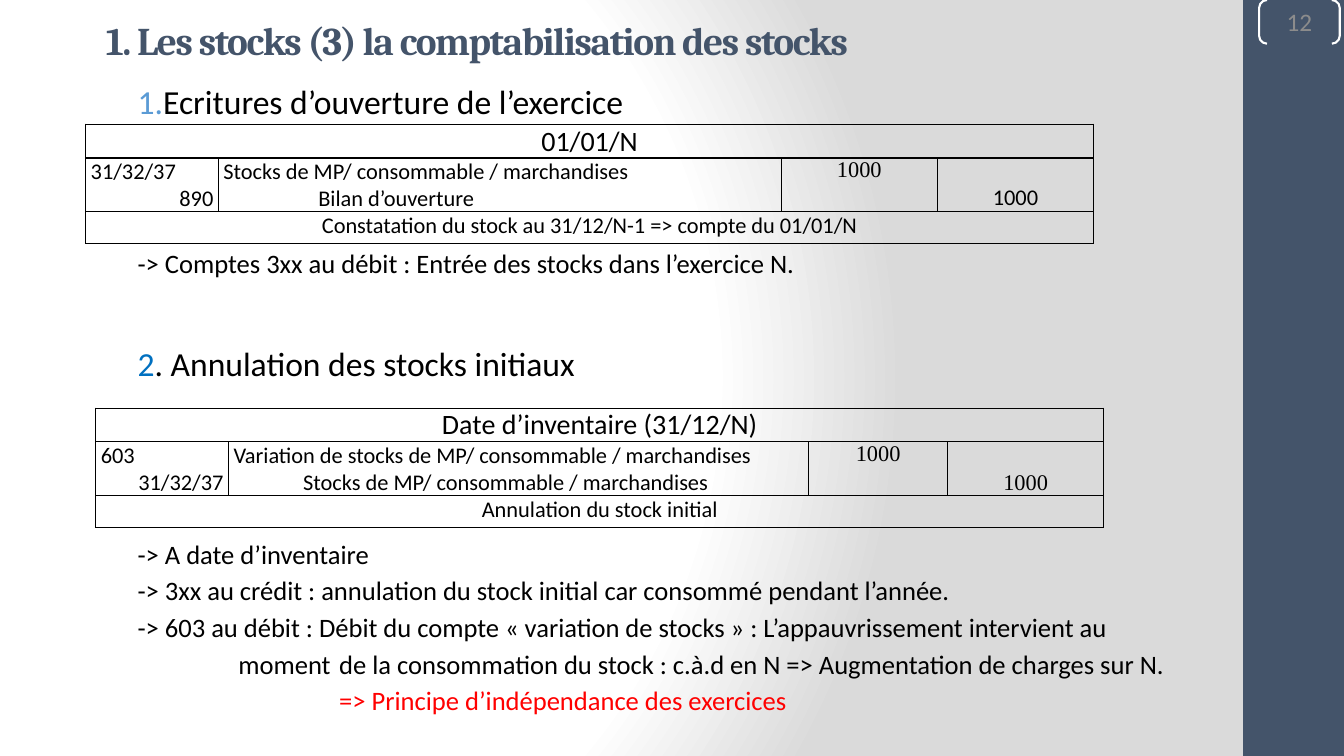
from dataclasses import dataclass

from lxml import etree
from pptx import Presentation
from pptx.dml.color import RGBColor
from pptx.enum.shapes import MSO_SHAPE
from pptx.enum.text import MSO_ANCHOR, PP_ALIGN
from pptx.oxml import parse_xml
from pptx.oxml.ns import nsdecls, qn
from pptx.util import Emu, Pt

LEFT, CENTER, RIGHT = PP_ALIGN.LEFT, PP_ALIGN.CENTER, PP_ALIGN.RIGHT
TOP, MIDDLE, BOTTOM = MSO_ANCHOR.TOP, MSO_ANCHOR.MIDDLE, MSO_ANCHOR.BOTTOM
RECT, BRACKETS = MSO_SHAPE.RECTANGLE, MSO_SHAPE.DOUBLE_BRACKET

# Grid: 160 columns by 90 rows of square units
COLS, ROWS = 160, 90
UNIT = 76200


@dataclass(frozen=True)
class Theme:
    ink: str = "000000"
    navy: str = "44546A"
    white: str = "FFFFFF"
    shade: str = "DADADA"
    grey: str = "8C8C8C"
    number: str = "5B9BD5"
    blue: str = "0070C0"
    red: str = "FF0000"
    body: str = "Calibri"
    heading: str = "Cambria"
    figures: str = "Times New Roman"
    title_size: float = 28
    section_size: float = 24
    date_size: float = 20
    note_size: float = 19
    page_size: float = 18
    entry_size: float = 16


T = Theme()


@dataclass(frozen=True)
class Para:
    text: str
    size: float = T.entry_size
    color: str = T.ink
    font: str = T.body
    align: PP_ALIGN = LEFT
    bold: bool = False
    before: float = 0
    margin: float = 0
    hang: float = 0
    numbered: bool = False
    lead: str = ""
    lead_color: str = T.blue


@dataclass(frozen=True)
class Entry:
    """A journal entry: date, debit and credit lines, wording."""
    x: float
    y: float
    widths: tuple[float, ...]
    date: str
    accounts: tuple[str, str]
    labels: tuple[str, str]
    indent: float
    credit_font: str
    wording: str


ENTRIES = (
    Entry(10.2, 14.8, (15.8, 67, 18.6, 18.6), "01/01/N", ("31/32/37", "890"),
          ("Stocks de MP/ consommable / marchandises", "Bilan d’ouverture"),
          11.3, T.body, "Constatation du stock au 31/12/N-1 => compte du 01/01/N"),
    Entry(11.4, 48.6, (15.8, 69.1, 16.5, 18.6), "Date d’inventaire (31/12/N)",
          ("603", "31/32/37"),
          ("Variation de stocks de MP/ consommable / marchandises",
           "Stocks de MP/ consommable / marchandises"),
          8.3, T.figures, "Annulation du stock initial"),
)
ENTRY_ROWS = (4, 6.4, 3.8)
AMOUNT = "1000"


def note(text: str, before: float = 3.4, margin: float = 1.5, color: str = T.ink) -> Para:
    return Para(text, T.note_size, color, before=before, margin=margin)


BODY = (
    Para("Ecritures d’ouverture de l’exercice", T.section_size,
         margin=4.5, hang=-3, numbered=True),
    note("-> Comptes 3xx au débit : Entrée des stocks dans l’exercice N.", 90),
    Para(". Annulation des stocks initiaux", T.section_size,
         before=46, margin=1.5, lead="2"),
    note("-> A date d’inventaire", 110),
    note("-> 3xx au crédit : annulation du stock initial car consommé pendant l’année."),
    note("-> 603 au débit : Débit du compte « variation de stocks » : "
         "L’appauvrissement intervient au"),
    note("moment\tde la consommation du stock : c.à.d en N => "
         "Augmentation de charges sur N.", margin=13.5),
    note("=> Principe d’indépendance des exercices", margin=25.5, color=T.red),
)


def u(n: float) -> Emu:
    return Emu(round(n * UNIT))


def rgb(color: str) -> RGBColor:
    return RGBColor.from_string(color)


def write(tf, paras: tuple[Para, ...]) -> None:
    for i, item in enumerate(paras):
        p = tf.paragraphs[0] if i == 0 else tf.add_paragraph()
        pPr = p._p.get_or_add_pPr()
        pPr.set("marL", str(u(item.margin)))
        pPr.set("indent", str(u(item.hang)))
        if item.numbered:
            color = etree.SubElement(pPr, qn("a:buClr"))
            etree.SubElement(color, qn("a:srgbClr"), val=T.number)
            etree.SubElement(pPr, qn("a:buAutoNum"), type="arabicPeriod")
        else:
            etree.SubElement(pPr, qn("a:buNone"))
        p.alignment, p.space_before = item.align, Pt(item.before)
        for text, color in ((item.lead, item.lead_color), (item.text, item.color)):
            if not text:
                continue
            r = p.add_run()
            r.text = text
            fmt = {"size": Pt(item.size), "name": item.font, "bold": item.bold}
            for name, value in fmt.items():
                setattr(r.font, name, value)
            r.font.color.rgb = rgb(color)


def add_preset(slide, kind: MSO_SHAPE, x: float, y: float, w: float, h: float):
    sp = slide.shapes.add_shape(kind, u(x), u(y), u(w), u(h))
    sp.shadow.inherit = False
    return sp


def fill_cell(cell, paras: tuple[Para, ...], anchor: MSO_ANCHOR = TOP) -> None:
    fmt = {"margin_left": u(0.6), "margin_right": u(0.6), "margin_top": 0,
           "margin_bottom": 0, "vertical_anchor": anchor}
    for name, value in fmt.items():
        setattr(cell, name, value)
    write(cell.text_frame, paras)


def add_entry(slide, e: Entry) -> None:
    tbl = slide.shapes.add_table(len(ENTRY_ROWS), len(e.widths), u(e.x), u(e.y),
                                 u(sum(e.widths)), u(sum(ENTRY_ROWS))).table
    tbl.first_row = tbl.horz_banding = False
    for col, width in zip(tbl.columns, e.widths):
        col.width = u(width)
    for row, height in zip(tbl.rows, ENTRY_ROWS):
        row.height = u(height)
    for cell in tbl.iter_cells():
        tcPr = cell._tc.get_or_add_tcPr()
        for side in ("lnL", "lnR", "lnT", "lnB"):
            tcPr.append(parse_xml(
                f'<a:{side} {nsdecls("a")} w="{Pt(1)}"><a:solidFill>'
                f'<a:srgbClr val="{T.ink}"/></a:solidFill></a:{side}>'))
        cell.fill.background()
    for row in (0, 2):
        tbl.cell(row, 0).merge(tbl.cell(row, len(e.widths) - 1))
    fill_cell(tbl.cell(0, 0), (Para(e.date, T.date_size, align=CENTER),))
    fill_cell(tbl.cell(1, 0), (Para(e.accounts[0]), Para(e.accounts[1], align=RIGHT)))
    fill_cell(tbl.cell(1, 1), (Para(e.labels[0]), Para(e.labels[1], margin=e.indent)))
    fill_cell(tbl.cell(1, 2), (Para(AMOUNT, font=T.figures, align=CENTER),))
    fill_cell(tbl.cell(1, 3), (Para(AMOUNT, font=e.credit_font, align=CENTER),), BOTTOM)
    fill_cell(tbl.cell(2, 0), (Para(e.wording, align=CENTER),))


def set_background(slide) -> None:
    stops = "".join(f'<a:gs pos="{pos * 1000}"><a:srgbClr val="{color}"/></a:gs>'
                    for pos, color in ((0, T.white), (75, T.white), (100, T.shade)))
    slide.element.cSld.insert(0, parse_xml(
        f'<p:bg {nsdecls("p", "a")}><p:bgPr><a:gradFill rotWithShape="1">'
        f'<a:gsLst>{stops}</a:gsLst><a:path path="circle">'
        '<a:fillToRect l="20000" t="50000" r="100000" b="50000"/></a:path>'
        '</a:gradFill><a:effectLst/></p:bgPr></p:bg>'))


def main() -> None:
    prs = Presentation()
    prs.slide_width, prs.slide_height = u(COLS), u(ROWS)
    slide = prs.slides.add_slide(prs.slide_layouts[5])
    set_background(slide)

    # Side band and page number
    band = add_preset(slide, RECT, 148, 0, 12, ROWS)
    band.fill.solid()
    band.fill.fore_color.rgb = rgb(T.navy)
    band.line.fill.background()
    page = add_preset(slide, BRACKETS, 149.9, 0, 9.6, 5.2)
    page.adjustments[0] = 0.18
    page.fill.background()
    page.line.color.rgb, page.line.width = rgb(T.white), Pt(1.5)
    tf = page.text_frame
    for side in ("left", "right", "top", "bottom"):
        setattr(tf, f"margin_{side}", 0)
    tf.vertical_anchor = MIDDLE
    write(tf, (Para("12", T.page_size, T.grey, align=CENTER),))

    # Title
    sp = slide.shapes.title
    sp.left, sp.top, sp.width, sp.height = u(11.4), u(1), u(100), u(7.4)
    sp.text_frame.vertical_anchor = MIDDLE
    write(sp.text_frame, (Para("1. Les stocks (3) la comptabilisation des stocks",
                               T.title_size, T.navy, T.heading, bold=True),))
    sp.text_frame.paragraphs[0].runs[0].font._element.set("spc", "-100")

    # Sections and notes, with the journal entries between them
    tf = slide.shapes.add_textbox(u(13.7), u(9), u(142.7), u(81)).text_frame
    tf.word_wrap = True
    write(tf, BODY)
    for entry in ENTRIES:
        add_entry(slide, entry)

    prs.save("out.pptx")


if __name__ == "__main__":
    main()
